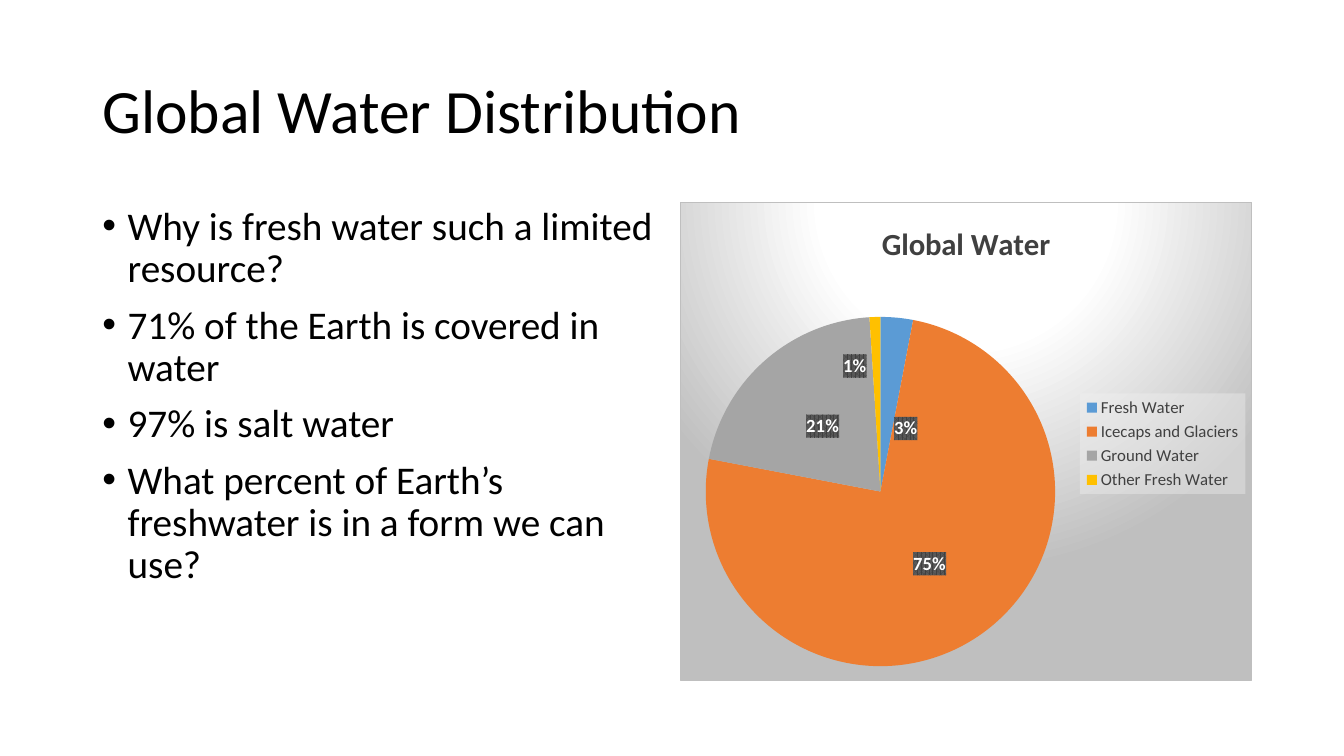
from copy import deepcopy

from lxml import etree
from pptx import Presentation
from pptx.chart.data import CategoryChartData
from pptx.dml.color import RGBColor
from pptx.enum.chart import XL_CHART_TYPE, XL_LABEL_POSITION, XL_LEGEND_POSITION
from pptx.enum.text import MSO_ANCHOR, MSO_AUTO_SIZE, PP_ALIGN
from pptx.oxml import parse_xml
from pptx.oxml.ns import nsdecls, qn
from pptx.util import Pt

PIE = XL_CHART_TYPE.PIE
CENTER = XL_LABEL_POSITION.CENTER
LEGEND_RIGHT = XL_LEGEND_POSITION.RIGHT
MIDDLE, TOP = MSO_ANCHOR.MIDDLE, MSO_ANCHOR.TOP
NO_AUTOFIT = MSO_AUTO_SIZE.NONE
LEFT = PP_ALIGN.LEFT

THEME = {
    "font": "Calibri", "text": "000000", "muted": "404040", "label": "FFFFFF",
    "label_stripe": "595959", "panel": "FFFFFF", "edge": "BFBFBF", "legend": "F2F2F2",
    "title_size": 44, "body_size": 28, "chart_title_size": 22,
    "label_size": 13.3, "legend_size": 12, "chart_size": 10,
}
WATER = [
    ("Fresh Water", 3, "5B9BD5"),
    ("Icecaps and Glaciers", 75, "ED7D31"),
    ("Ground Water", 21, "A5A5A5"),
    ("Other Fresh Water", 1, "FFC000"),
]
POINTS = [
    "Why is fresh water such a limited resource?",
    "71% of the Earth is covered in water",
    "97% is salt water",
    "What percent of Earth’s freshwater is in a form we can use?",
]
MARGIN, COLUMN_TOP, COLUMN_WIDTH, COLUMN_HEIGHT = 66, 144, 408, 342.5
CHART_LEFT = 486


def style(font, size, color, bold=False):
    font.name, font.size, font.bold = THEME["font"], Pt(THEME[size]), bold
    font.color.rgb = RGBColor.from_string(THEME[color])


def set_layout(parent, position, **places):
    for old in parent.findall(qn("c:layout")):
        parent.remove(old)
    layout = parse_xml(f"<c:layout {nsdecls('c')}><c:manualLayout/></c:layout>")
    for tag, value in places.items():
        etree.SubElement(layout[0], qn(f"c:{tag}")).set("val", str(value))
    parent.insert(position, layout)


prs = Presentation()
prs.slide_width, prs.slide_height = Pt(960), Pt(540)
slide = prs.slides.add_slide(prs.slide_layouts[1])

# Title
heading, body = slide.placeholders
heading.left, heading.top, heading.width, heading.height = Pt(MARGIN), Pt(28.75), Pt(828), Pt(104.4)
heading.text_frame.vertical_anchor = MIDDLE
heading.text_frame.auto_size = NO_AUTOFIT
headline = heading.text_frame.paragraphs[0]
headline.alignment, headline.line_spacing = LEFT, 0.9
headline_run = headline.add_run()
headline_run.text = "Global Water Distribution"
style(headline_run.font, "title_size", "text")

# Bulleted points
body.left, body.top, body.width, body.height = (
    Pt(MARGIN), Pt(COLUMN_TOP), Pt(COLUMN_WIDTH), Pt(COLUMN_HEIGHT))
body.text_frame.vertical_anchor = TOP
body.text_frame.auto_size = NO_AUTOFIT
for number, point in enumerate(POINTS):
    bullet = body.text_frame.add_paragraph() if number else body.text_frame.paragraphs[0]
    bullet.line_spacing, bullet.space_before = 0.9, Pt(10)
    bullet_format = bullet._p.get_or_add_pPr()
    bullet_format.set("marL", str(Pt(18)))
    bullet_format.set("indent", str(-Pt(18)))
    bullet_format.append(parse_xml(f'<a:buFont {nsdecls("a")} typeface="Arial"/>'))
    bullet_format.append(parse_xml(f'<a:buChar {nsdecls("a")} char="•"/>'))
    point_run = bullet.add_run()
    point_run.text = point
    style(point_run.font, "body_size", "text")

# Pie chart
water_data = CategoryChartData()
water_data.categories = [name for name, _, _ in WATER]
water_data.add_series("Global Water", [share for _, share, _ in WATER])
chart = slide.shapes.add_chart(
    PIE, Pt(CHART_LEFT), Pt(COLUMN_TOP), Pt(COLUMN_WIDTH), Pt(COLUMN_HEIGHT), water_data).chart
style(chart.font, "chart_size", "text")
chart.has_title = True
chart_title_run = chart.chart_title.text_frame.paragraphs[0].add_run()
chart_title_run.text = "Global Water"
style(chart_title_run.font, "chart_title_size", "muted", bold=True)
chart.plots[0].vary_by_categories = True
water_series = chart.plots[0].series[0]
for index, (_, _, color) in enumerate(WATER):
    slice_fill = water_series.points[index].format.fill
    slice_fill.solid()
    slice_fill.fore_color.rgb = RGBColor.from_string(color)
set_layout(chart.element.find(".//" + qn("c:plotArea")), 0, layoutTarget="inner",
           xMode="edge", yMode="edge", x=0.04, y=0.24, w=0.62, h=0.73)

# Chart background
chart.element.find(qn("c:chart")).addnext(parse_xml(f"""
<c:spPr {nsdecls("c", "a")}>
  <a:gradFill><a:gsLst>
    <a:gs pos="0"><a:srgbClr val="{THEME['panel']}"/></a:gs>
    <a:gs pos="39000"><a:srgbClr val="{THEME['panel']}"/></a:gs>
    <a:gs pos="100000"><a:srgbClr val="{THEME['edge']}"/></a:gs>
  </a:gsLst><a:path path="circle">
    <a:fillToRect l="50000" t="-80000" r="50000" b="180000"/>
  </a:path></a:gradFill>
  <a:ln w="{Pt(0.75)}"><a:solidFill><a:srgbClr val="{THEME['edge']}"/></a:solidFill></a:ln>
</c:spPr>"""))

# Percentage labels
labels = water_series.data_labels
labels.show_percentage, labels.show_value = True, False
labels.number_format, labels.number_format_is_linked = "0%", False
labels.position = CENTER
style(labels.font, "label_size", "label", bold=True)
label_list = water_series._element.find(qn("c:dLbls"))
label_list.find(qn("c:txPr")).addprevious(parse_xml(f"""
<c:spPr {nsdecls("c", "a")}><a:pattFill prst="pct75">
  <a:fgClr><a:srgbClr val="{THEME['muted']}"/></a:fgClr>
  <a:bgClr><a:srgbClr val="{THEME['label_stripe']}"/></a:bgClr>
</a:pattFill></c:spPr>"""))

# Labels of the thin slices, moved off centre
shared_settings = [item for item in label_list if item.tag != qn("c:showLeaderLines")]
for place, (index, x, y) in enumerate([(0, 0.03, 0.05), (3, -0.04, -0.08)]):
    moved_label = parse_xml(f'<c:dLbl {nsdecls("c")}><c:idx val="{index}"/></c:dLbl>')
    set_layout(moved_label, 1, x=x, y=y)
    moved_label.extend(deepcopy(shared_settings))
    label_list.insert(place, moved_label)

# Legend
chart.has_legend = True
chart.legend.position, chart.legend.include_in_layout = LEGEND_RIGHT, False
style(chart.legend.font, "legend_size", "muted")
legend = chart.element.find(".//" + qn("c:legend"))
set_layout(legend, 1, xMode="edge", yMode="edge", x=0.7, y=0.4, w=0.29, h=0.21)
legend.find(qn("c:txPr")).addprevious(parse_xml(f"""
<c:spPr {nsdecls("c", "a")}><a:solidFill>
  <a:srgbClr val="{THEME['legend']}"><a:alpha val="39000"/></a:srgbClr>
</a:solidFill></c:spPr>"""))

prs.save("out.pptx")
